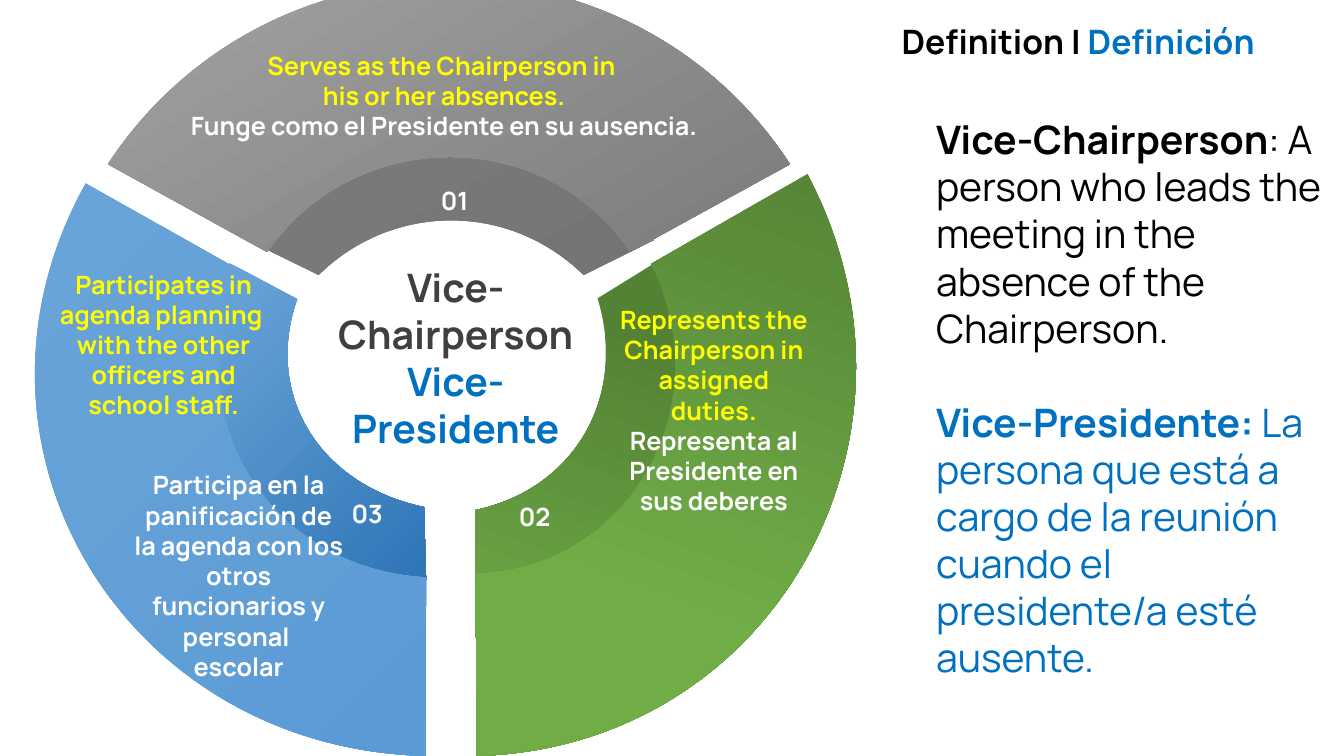
from dataclasses import dataclass

from pptx import Presentation
from pptx.dml.color import RGBColor
from pptx.enum.text import PP_ALIGN
from pptx.oxml.ns import qn
from pptx.oxml.xmlchemy import OxmlElement
from pptx.util import Cm, Pt


@dataclass(frozen=True)
class Theme:
    font: str = "Manrope"
    label: int = 18
    heading: int = 24
    large: int = 28
    line_height: float = 1.2
    black: str = "000000"
    charcoal: str = "3F3F3F"
    white: str = "FFFFFF"
    yellow: str = "FFFF00"
    blue: str = "0070C0"
    # Gradients: (position, colour), (position, colour)
    grey_band: tuple = ((0, "7C7C7C"), (1, "747474"))
    grey_ring: tuple = ((0, "A5A5A5"), (1, "7C7C7C"))
    green_band: tuple = ((0.24, "548235"), (1, "68A142"))
    green_ring: tuple = ((0, "548235"), (0.72, "70AD47"))
    blue_band: tuple = ((0.11, "6BA5D9"), (1, "2E75B6"))
    blue_ring: tuple = ((0, "6BA5D9"), (1, "5B9BD5"))


T = Theme()

# Boxes are left, top, width, height in cm. A paragraph is a list of
# (text, colour, bold) runs.
HUB = ((7.98, 6.5, 7.01, 4.44), [
    [("Vice-", T.charcoal, True)],
    [("Chairperson", T.charcoal, True)],
    [("Vice-", T.blue, True)],
    [("Presidente", T.blue, True)],
])
TITLE = ((22, 0.41, 10.34, 2.36), [
    [("Definition | ", T.black, True), ("Definición", T.blue, True)],
])
DEFINITIONS = ((23.34, 2.79, 10.29, 15.19), [
    [("Vice-Chairperson", T.black, True),
     (": A person who leads the meeting in the absence of the Chairperson.", T.black, False)],
    [("Vice-Presidente:", T.blue, True),
     (" La persona que está a cargo de la reunión cuando el presidente/a esté ausente.",
      T.blue, False)],
])
AGENDA_ES = ((3.12, 11.71, 5.79, 5.64), [
    [("Participa en la panificación de la agenda con los otros funcionarios y personal ",
      T.white, True)],
    [("escolar", T.white, True)],
])

# Each band and ring is an outer and an inner Bézier arc: start, two controls, end.
DUTIES = [
    {
        "angle": 60,
        "band": (T.grey_band,
                 [(6.22, 6.05), (8.69, 2.97), (14.3, 2.92), (16.48, 6.05)],
                 [(14.71, 6.93), (12.85, 5.11), (9.93, 5.08), (8.03, 6.93)]),
        "ring": (T.grey_ring,
                 [(2.72, 4.14), (6.73, -1.98), (15.88, -2.03), (19.91, 4.14)],
                 [(15.88, 6.35), (13.82, 3.2), (8.99, 3.12), (6.73, 6.35)]),
        "number": ("01", (9.58, 4.55, 3.76, 1.14)),
        "text": ((3.99, 1.14, 14.4, 2.57), [
            [("Serves as the Chairperson in ", T.yellow, True)],
            [("his or her absences.", T.yellow, True)],
            [("Funge como el Presidente en su ausencia.", T.white, True)],
        ]),
    },
    {
        "angle": 110,
        "band": (T.green_band,
                 [(16.66, 6.53), (18.26, 10.11), (15.77, 14.61), (11.99, 14.71)],
                 [(11.99, 12.85), (14.48, 12.32), (15.82, 10.01), (15.06, 7.52)]),
        "ring": (T.green_ring,
                 [(20.35, 4.39), (23.85, 11.02), (19.46, 18.85), (12.01, 19.05)],
                 [(11.99, 14.45), (15.8, 14.35), (18.21, 10.29), (16.41, 6.65)]),
        "number": ("02", (11.76, 12.5, 3.43, 1.19)),
        "text": ((15.21, 7.54, 5.56, 5.64), [
            [("Represents the Chairperson in assigned duties.", T.yellow, True)],
            [("Representa al Presidente en sus deberes", T.white, True)],
        ]),
    },
    {
        "angle": 45,
        "band": (T.blue_band,
                 [(10.74, 14.63), (6.65, 14.27), (3.89, 9.93), (5.79, 6.63)],
                 [(7.49, 7.54), (6.65, 9.93), (8.03, 12.22), (10.69, 12.78)]),
        "ring": (T.blue_ring,
                 [(10.72, 19.05), (3.1, 18.85), (-1.5, 11.18), (2.16, 4.62)],
                 [(6.17, 6.88), (4.32, 10.24), (6.65, 14.33), (10.74, 14.55)]),
        "number": ("03", (7.44, 12.44, 3.63, 1.17)),
        "text": ((1.19, 6.65, 5.87, 4.88), [
            [("Participates in agenda planning ", T.yellow, True)],
            [("with the other officers and school staff.", T.yellow, True)],
        ]),
    },
]


def edge(a, b):
    """Bézier controls and end point of a straight side from a to b."""
    return [tuple(p + (q - p) * i / 3 for p, q in zip(a, b)) for i in (1, 2, 3)]


def bend_lines(sp):
    """Turn every three line segments of a freeform into one Bézier curve."""
    lines = list(sp._element.iter(qn("a:lnTo")))
    for i in range(0, len(lines), 3):
        curve = OxmlElement("a:cubicBezTo")
        lines[i].addprevious(curve)
        for line in lines[i:i + 3]:
            curve.append(line[0])
            line.getparent().remove(line)


def add_sector(shapes, sector, angle):
    gradient, outer, inner = sector
    outline = outer + edge(outer[-1], inner[0]) + inner[1:] + edge(inner[-1], outer[0])
    points = [(Cm(x), Cm(y)) for x, y in outline]
    builder = shapes.build_freeform(*points[0])
    builder.add_line_segments(points[1:], close=True)
    sp = builder.convert_to_shape()
    bend_lines(sp)
    sp.shadow.inherit = False
    sp.line.fill.background()
    sp.fill.gradient()
    sp.fill.gradient_angle = 360 - angle  # gradient_angle runs counter-clockwise
    for stop, (position, colour) in zip(sp.fill.gradient_stops, gradient):
        stop.position = position
        stop.color.rgb = RGBColor.from_string(colour)


def add_text(shapes, box, paragraphs, size, align=PP_ALIGN.CENTER, wrap=True, gap=0):
    """Add a text box; gap is the space in points between paragraphs."""
    tf = shapes.add_textbox(*map(Cm, box)).text_frame
    tf.word_wrap = wrap
    for i, runs in enumerate(paragraphs):
        p = tf.add_paragraph() if i else tf.paragraphs[0]
        p.alignment = align
        if i and gap:
            p.space_before = Pt(gap)
        for text, colour, bold in runs:
            r = p.add_run()
            r.text = text
            r.font.name = T.font
            r.font.size = Pt(size)
            r.font.bold = bold
            r.font.color.rgb = RGBColor.from_string(colour)


def add_duty(s, duty):
    shapes = s.shapes.add_group_shape().shapes
    number, box = duty["number"]
    add_sector(shapes, duty["band"], duty["angle"])
    add_text(shapes, box, [[(number, T.white, True)]], T.label, wrap=False)
    add_sector(shapes, duty["ring"], duty["angle"])
    add_text(shapes, *duty["text"], T.label)


def main():
    prs = Presentation()
    prs.slide_width, prs.slide_height = Cm(33.87), Cm(19.05)
    s = prs.slides.add_slide(prs.slide_layouts[6])
    add_text(s.shapes, *HUB, T.large, wrap=False)
    add_text(s.shapes, *DEFINITIONS, T.large, PP_ALIGN.LEFT, gap=T.large * T.line_height)
    for duty in DUTIES:
        add_duty(s, duty)
    add_text(s.shapes, *TITLE, T.heading)
    add_text(s.shapes, *AGENDA_ES, T.label)
    prs.save("out.pptx")


if __name__ == "__main__":
    main()
